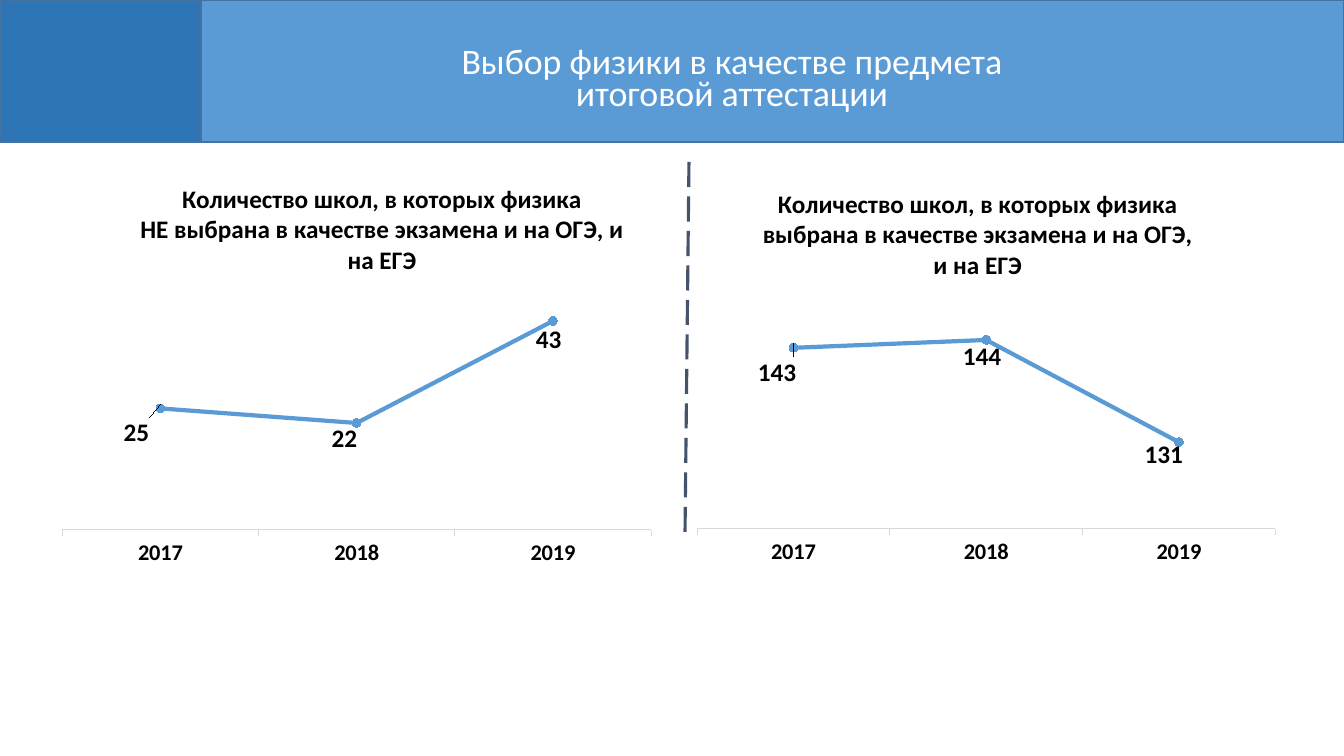
from dataclasses import dataclass

from lxml.etree import SubElement
from pptx import Presentation
from pptx.chart.chart import Chart
from pptx.chart.data import CategoryChartData
from pptx.dml.color import RGBColor
from pptx.enum.chart import XL_CHART_TYPE, XL_LABEL_POSITION, XL_MARKER_STYLE, XL_TICK_MARK
from pptx.enum.dml import MSO_LINE
from pptx.enum.shapes import MSO_CONNECTOR, MSO_SHAPE
from pptx.enum.text import MSO_ANCHOR, PP_ALIGN
from pptx.oxml.ns import qn
from pptx.oxml.xmlchemy import BaseOxmlElement
from pptx.slide import Slide
from pptx.text.text import Font
from pptx.util import Emu, Pt

EMU_PER_PX = 9071


@dataclass(frozen=True)
class Theme:
    font: str = "Calibri"
    band: RGBColor = RGBColor(0x5B, 0x9B, 0xD5)
    corner: RGBColor = RGBColor(0x2E, 0x75, 0xB6)
    outline: RGBColor = RGBColor(0x43, 0x73, 0x9E)
    divider: RGBColor = RGBColor(0x44, 0x54, 0x6A)
    axis: RGBColor = RGBColor(0xD9, 0xD9, 0xD9)
    text: RGBColor = RGBColor(0, 0, 0)
    heading: RGBColor = RGBColor(0xFF, 0xFF, 0xFF)
    heading_size: float = 25.6
    label_size: float = 18
    year_size: float = 16
    base_size: float = 10


@dataclass(frozen=True)
class Box:
    left: int
    top: int
    width: int
    height: int

    def emu(self) -> tuple[Emu, Emu, Emu, Emu]:
        return px(self.left), px(self.top), px(self.width), px(self.height)


@dataclass(frozen=True)
class SchoolTrend:
    """A chart of school counts; plot and title places are relative to its box."""
    box: Box
    plot: Box
    title_at: tuple[int, int]
    title: str
    counts: tuple[int, ...]
    label_shifts: tuple[tuple[int, int], ...]
    scale: tuple[int, int]


THEME = Theme()
YEARS = ("2017", "2018", "2019")
HEADING = "Выбор физики в качестве предмета\nитоговой аттестации"
TRENDS = (
    SchoolTrend(
        Box(50, 162, 614, 414), Box(12, 125, 589, 243), (87, 17),
        "Количество школ, в которых физика\n"
        "НЕ выбрана в качестве экзамена и на ОГЭ, и на ЕГЭ",
        (25, 22, 43), ((-24, 48), (-12, 39), (-4, 42)), (0, 50),
    ),
    SchoolTrend(
        Box(685, 164, 603, 409), Box(12, 129, 578, 236), (75, 20),
        "Количество школ, в которых физика выбрана в качестве экзамена и на ОГЭ,\n"
        "и на ЕГЭ",
        (143, 144, 131), ((-16, 48), (-4, 40), (-15, 36)), (120, 150),
    ),
)


def px(length: int) -> Emu:
    return Emu(length * EMU_PER_PX)


def style_font(font: Font, size: float, color: RGBColor, bold: bool = False) -> None:
    font.name, font.size, font.bold = THEME.font, Pt(size), bold
    font.color.rgb = color


def set_layout(parent: BaseOxmlElement, index: int, **settings: str | float) -> None:
    """Replace the manual layout of a chart part, as child number index."""
    for old_layout in parent.findall(qn("c:layout")):
        parent.remove(old_layout)
    layout = SubElement(parent, qn("c:layout"))
    manual = SubElement(layout, qn("c:manualLayout"))
    for name, value in settings.items():
        SubElement(manual, qn(f"c:{name}")).set("val", str(value))
    parent.insert(index, layout)


def add_band(slide: Slide, box: Box, color: RGBColor) -> None:
    band = slide.shapes.add_shape(MSO_SHAPE.RECTANGLE, *box.emu())
    band.shadow.inherit = False
    band.fill.solid()
    band.fill.fore_color.rgb = color
    band.line.color.rgb = THEME.outline
    band.line.width = Pt(1)


def add_heading(slide: Slide, box: Box) -> None:
    frame = slide.shapes.add_textbox(*box.emu()).text_frame
    frame.word_wrap = True
    frame.vertical_anchor = MSO_ANCHOR.MIDDLE
    frame.text = HEADING
    for number, paragraph in enumerate(frame.paragraphs):
        paragraph.alignment = PP_ALIGN.CENTER
        paragraph.line_spacing = 0.7
        paragraph.space_before = Pt(0.8 if number else 0)
        style_font(paragraph.runs[0].font, THEME.heading_size, THEME.heading)


def add_divider(slide: Slide, start: tuple[int, int], end: tuple[int, int]) -> None:
    divider = slide.shapes.add_connector(
        MSO_CONNECTOR.STRAIGHT, *map(px, start), *map(px, end))
    divider.line.color.rgb = THEME.divider
    divider.line.width = Pt(2.25)
    divider.line.dash_style = MSO_LINE.LONG_DASH
    SubElement(divider.element.spPr, qn("a:effectLst"))


def style_title(chart: Chart, trend: SchoolTrend) -> None:
    title = chart.chart_title
    title.text_frame.text = trend.title
    for paragraph in title.text_frame.paragraphs:
        paragraph.alignment = PP_ALIGN.CENTER
        style_font(paragraph.runs[0].font, THEME.label_size, THEME.text, bold=True)
    left, top = trend.title_at
    set_layout(title._element, 1, xMode="edge", yMode="edge",
               x=round(left / trend.box.width, 3), y=round(top / trend.box.height, 3))


def style_axes(chart: Chart, trend: SchoolTrend) -> None:
    years = chart.category_axis
    years.major_tick_mark = XL_TICK_MARK.OUTSIDE
    years.format.line.color.rgb = THEME.axis
    years.format.line.width = Pt(0.75)
    style_font(years.tick_labels.font, THEME.year_size, THEME.text, bold=True)
    schools = chart.value_axis
    schools.minimum_scale, schools.maximum_scale = trend.scale
    schools.has_major_gridlines = False
    schools.tick_labels.number_format = "0.0"
    schools.tick_labels.number_format_is_linked = False
    schools.visible = False


def style_series(chart: Chart, trend: SchoolTrend) -> None:
    counts = chart.plots[0].series[0]
    counts.smooth = False
    counts.format.line.color.rgb = THEME.band
    counts.format.line.width = Pt(3)
    counts.marker.style = XL_MARKER_STYLE.CIRCLE
    counts.marker.size = 6
    counts.marker.format.fill.solid()
    counts.marker.format.fill.fore_color.rgb = THEME.band
    counts.marker.format.line.color.rgb = THEME.band
    labels = counts.data_labels
    labels.show_value = True
    labels.number_format, labels.number_format_is_linked = "#,##0", False
    labels.position = XL_LABEL_POSITION.ABOVE
    style_font(labels.font, THEME.label_size, THEME.text, bold=True)
    for number, (right, down) in enumerate(trend.label_shifts):
        label = counts.points[number].data_label
        label.position = XL_LABEL_POSITION.ABOVE
        style_font(label.font, THEME.label_size, THEME.text, bold=True)
        set_layout(labels._element.findall(qn("c:dLbl"))[number], 1,
                   x=round(right / trend.box.width, 3), y=round(down / trend.box.height, 3))


def add_trend(slide: Slide, trend: SchoolTrend) -> None:
    data = CategoryChartData()
    data.categories = YEARS
    data.add_series("Series 1", trend.counts)
    chart = slide.shapes.add_chart(
        XL_CHART_TYPE.LINE_MARKERS, *trend.box.emu(), data).chart
    chart.has_legend = False
    chart.plots[0].vary_by_categories = False
    style_font(chart.font, THEME.base_size, THEME.text)
    style_title(chart, trend)
    style_axes(chart, trend)
    style_series(chart, trend)
    box, plot = trend.box, trend.plot
    set_layout(chart._chartSpace.chart.plotArea, 0,
               layoutTarget="inner", xMode="edge", yMode="edge",
               x=round(plot.left / box.width, 3), y=round(plot.top / box.height, 3),
               w=round(plot.width / box.width, 3), h=round(plot.height / box.height, 3))


def main() -> None:
    deck = Presentation()
    deck.slide_width, deck.slide_height = px(1344), px(756)
    slide = deck.slides.add_slide(deck.slide_layouts[6])
    add_band(slide, Box(201, 0, 1143, 142), THEME.band)
    add_heading(slide, Box(251, 43, 962, 77))
    add_band(slide, Box(0, 0, 201, 142), THEME.corner)
    for trend in TRENDS:
        add_trend(slide, trend)
    add_divider(slide, (689, 162), (685, 535))
    deck.save("out.pptx")


if __name__ == "__main__":
    main()
